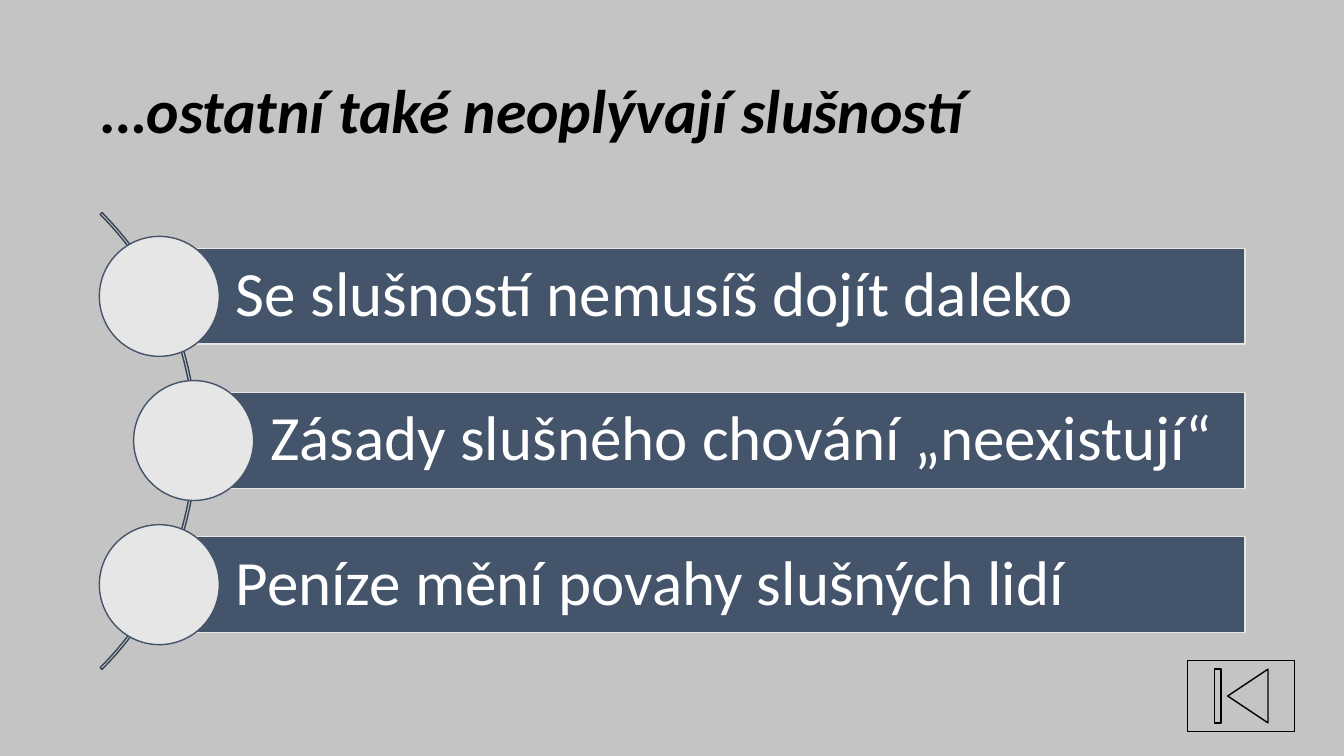
"""Build a slide with a title, an arc of three labelled bars and a back button."""
from dataclasses import dataclass

from pptx import Presentation
from pptx import util as u
from pptx.dml.color import RGBColor
from pptx.enum import shapes, text


@dataclass(frozen=True)
class Theme:
    font: str = "Calibri"
    background: str = "C4C4C4"
    ink: str = "000000"
    bar: str = "44546A"
    arc: str = "364355"
    pale: str = "E7E6E6"
    white: str = "FFFFFF"
    title_size: int = 44
    bar_size: int = 45


theme = Theme()
KINDS = shapes.MSO_SHAPE


def add_figure(kind, left, top, width, height, fill, line):
    shape = slide.shapes.add_shape(kind, *map(u.Inches, (left, top, width, height)))
    shape.shadow.inherit = False
    if fill:
        shape.fill.solid()
        shape.fill.fore_color.rgb = RGBColor.from_string(fill)
    else:
        shape.fill.background()
    shape.line.color.rgb = RGBColor.from_string(line)
    shape.line.width = u.Pt(1)
    return shape


def write(shape, words, size, color, emphasis=False):
    frame = shape.text_frame
    frame.word_wrap = True
    frame.auto_size = text.MSO_AUTO_SIZE.NONE
    frame.vertical_anchor = text.MSO_ANCHOR.MIDDLE
    paragraph = frame.paragraphs[0]
    paragraph.alignment = text.PP_ALIGN.LEFT
    paragraph.line_spacing = 0.9
    run = paragraph.add_run()
    run.text = words
    run.font.name = theme.font
    run.font.size = u.Pt(size)
    run.font.bold = run.font.italic = emphasis
    run.font.color.rgb = RGBColor.from_string(color)
    return frame


presentation = Presentation()
presentation.slide_width = u.Inches(13.33)
presentation.slide_height = u.Inches(7.5)
slide = presentation.slides.add_slide(presentation.slide_layouts[5])
slide.background.fill.solid()
slide.background.fill.fore_color.rgb = RGBColor.from_string(theme.background)

title = slide.shapes.title
title.left, title.top, title.width, title.height = map(u.Inches, (0.92, 0.4, 11.5, 1.45))
write(title, "…ostatní také neoplývají slušností", theme.title_size, theme.ink, True)

arc = add_figure(KINDS.BLOCK_ARC, -4.46, 1.17, 6.41, 6.41, None, theme.arc)
for index, value in enumerate((189, 27, 0.004)):
    arc.adjustments[index] = value

bar_right, bar_height, circle_size = 12.35, 0.95, 1.19
first_middle, row_pitch = 2.94, 1.43
rows = (
    (1.58, "Se slušností nemusíš dojít daleko"),
    (1.92, "Zásady slušného chování „neexistují“"),
    (1.58, "Peníze mění povahy slušných lidí"),
)
for row, (bar_left, words) in enumerate(rows):
    middle = first_middle + row * row_pitch
    bar = add_figure(KINDS.RECTANGLE, bar_left, middle - bar_height / 2,
                     bar_right - bar_left, bar_height, theme.bar, theme.pale)
    frame = write(bar, words, theme.bar_size, theme.white)
    frame.margin_left = u.Inches(0.76)
    frame.margin_top = frame.margin_right = frame.margin_bottom = u.Inches(0.12)
    add_figure(KINDS.OVAL, bar_left - circle_size / 2, middle - circle_size / 2,
               circle_size, circle_size, theme.pale, theme.bar)

add_figure(KINDS.ACTION_BUTTON_BEGINNING, 11.78, 6.55, 1.06, 0.71, None, theme.ink)

presentation.save("out.pptx")
